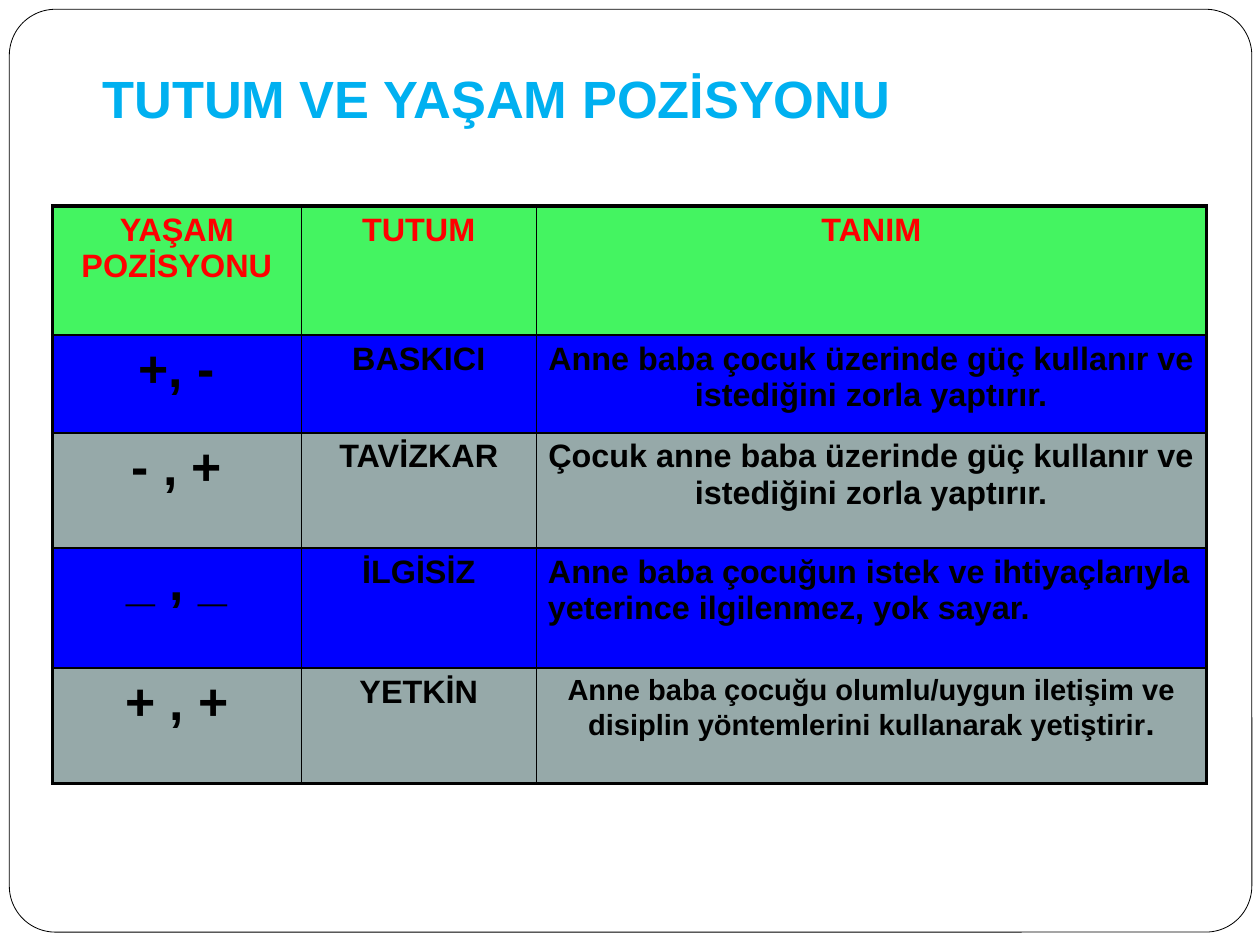
from lxml import etree
from pptx import Presentation
from pptx.dml.color import RGBColor
from pptx.enum.shapes import MSO_SHAPE
from pptx.enum.text import MSO_ANCHOR, MSO_AUTO_SIZE, PP_ALIGN
from pptx.oxml.ns import qn
from pptx.util import Inches, Pt

ROUNDED = MSO_SHAPE.ROUNDED_RECTANGLE
TOP, BOTTOM = MSO_ANCHOR.TOP, MSO_ANCHOR.BOTTOM
LEFT, CENTER = PP_ALIGN.LEFT, PP_ALIGN.CENTER
NO_FIT = MSO_AUTO_SIZE.NONE

WHITE = RGBColor(0xFF, 0xFF, 0xFF)
BLACK = RGBColor(0, 0, 0)
SKY = RGBColor(0x00, 0xB0, 0xF0)
RED = RGBColor(0xFF, 0, 0)
GREEN = RGBColor(0x44, 0xF4, 0x61)
BLUE = RGBColor(0, 0, 0xFF)
GRAY = RGBColor(0x96, 0xA9, 0xA9)

THIN, THICK = 1, 2.25
TITLE_ONLY = 5

HEADINGS = ["YAŞAM POZİSYONU", "TUTUM", "TANIM"]
ATTITUDES = [
    ("+, -", "BASKICI",
     "Anne baba çocuk üzerinde güç kullanır ve istediğini zorla yaptırır."),
    ("- , +", "TAVİZKAR",
     "Çocuk anne baba üzerinde güç kullanır ve istediğini zorla yaptırır."),
    ("_ , _", "İLGİSİZ",
     "Anne baba çocuğun istek ve ihtiyaçlarıyla yeterince ilgilenmez, yok sayar."),
    ("+ , +", "YETKİN",
     "Anne baba çocuğu olumlu/uygun iletişim ve disiplin yöntemlerini kullanarak yetiştirir"),
]
COLUMN_WIDTHS = [2.14, 2.02, 5.76]
ROW_HEIGHTS = [1.11, 0.84, 0.99, 1.03, 0.99]


def add_span(para, text, *, size=20, color=BLACK, font="Arial", bold=True):
    span = para.add_run()
    span.text = text
    span.font.name = font
    span.font.size = Pt(size)
    span.font.bold = bold
    span.font.color.rgb = color


def set_border(cell, side, width):
    properties = cell._tc.get_or_add_tcPr()
    line = etree.SubElement(properties, qn(f"a:ln{side}"), w=str(Pt(width)))
    fill = etree.SubElement(line, qn("a:solidFill"))
    etree.SubElement(fill, qn("a:srgbClr"), val=str(BLACK))


class AttitudeSlide:
    def __init__(self, deck):
        self.page = deck.slides.add_slide(deck.slide_layouts[TITLE_ONLY])

    def title(self, text, left, top, width, height):
        box = self.page.shapes.title
        box.left, box.top = Inches(left), Inches(top)
        box.width, box.height = Inches(width), Inches(height)
        frame = box.text_frame
        frame.word_wrap = True
        frame.auto_size = NO_FIT
        frame.vertical_anchor = BOTTOM
        frame.margin_left = frame.margin_right = frame.margin_bottom = Inches(0.11)
        frame.margin_top = Inches(0.05)
        para = frame.paragraphs[0]
        para.alignment = LEFT
        add_span(para, text, size=32.4, color=SKY)

    def border_frame(self, left, top, width, height):
        box = self.page.shapes.add_shape(
            ROUNDED, Inches(left), Inches(top), Inches(width), Inches(height))
        box.adjustments[0] = 0.05
        box.shadow.inherit = False
        box.fill.solid()
        box.fill.fore_color.rgb = WHITE
        box.line.color.rgb = BLACK
        box.line.width = Pt(0.5)
        # Place the frame behind the title
        self.page.shapes.title.element.addprevious(box.element)

    def table(self, left, top, widths, heights):
        table = self.page.shapes.add_table(
            len(heights), len(widths), Inches(left), Inches(top),
            Inches(sum(widths)), Inches(sum(heights))).table
        for column, width in zip(table.columns, widths):
            column.width = Inches(width)
        for row, height in zip(table.rows, heights):
            row.height = Inches(height)
        last_row, last_column = len(heights) - 1, len(widths) - 1
        for r in range(len(heights)):
            for c in range(len(widths)):
                outer = {"L": c == 0, "R": c == last_column,
                         "T": r == 0, "B": r == last_row}
                for side, is_outer in outer.items():
                    set_border(table.cell(r, c), side, THICK if is_outer else THIN)
        return table

    def cell(self, cell, text, fill, align=CENTER, **style):
        cell.fill.solid()
        cell.fill.fore_color.rgb = fill
        cell.vertical_anchor = TOP
        para = cell.text_frame.paragraphs[0]
        para.alignment = align
        add_span(para, text, **style)
        return para


def main():
    deck = Presentation()
    deck.slide_width, deck.slide_height = Inches(10.83), Inches(8.12)
    slide = AttitudeSlide(deck)

    # Frame and title
    slide.border_frame(0.08, 0.08, 10.68, 7.93)
    slide.title("TUTUM VE YAŞAM POZİSYONU", 0.77, 0.52, 9.21, 0.7)

    # Table heading
    table = slide.table(0.45, 1.77, COLUMN_WIDTHS, ROW_HEIGHTS)
    for c, heading in enumerate(HEADINGS):
        slide.cell(table.cell(0, c), heading, GREEN, color=RED)

    # One row per attitude, in alternating colours
    for r, (position, attitude, description) in enumerate(ATTITUDES, start=1):
        fill = BLUE if r % 2 else GRAY
        is_last = r == len(ATTITUDES)
        slide.cell(table.cell(r, 0), position, fill, size=32)
        slide.cell(table.cell(r, 1), attitude, fill)
        para = slide.cell(table.cell(r, 2), description, fill,
                          align=LEFT if attitude == "İLGİSİZ" else CENTER,
                          size=18 if is_last else 20)
        if is_last:
            add_span(para, ".")

    deck.save("out.pptx")


if __name__ == "__main__":
    main()
